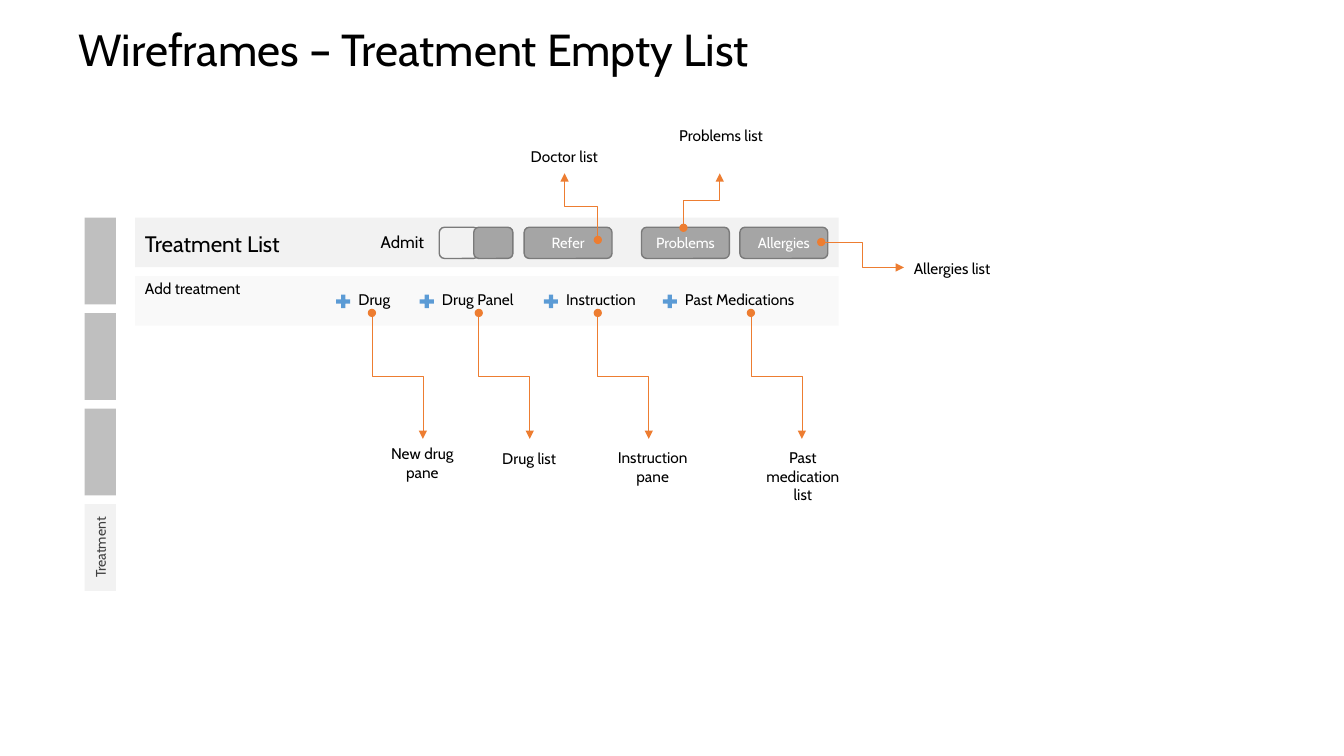
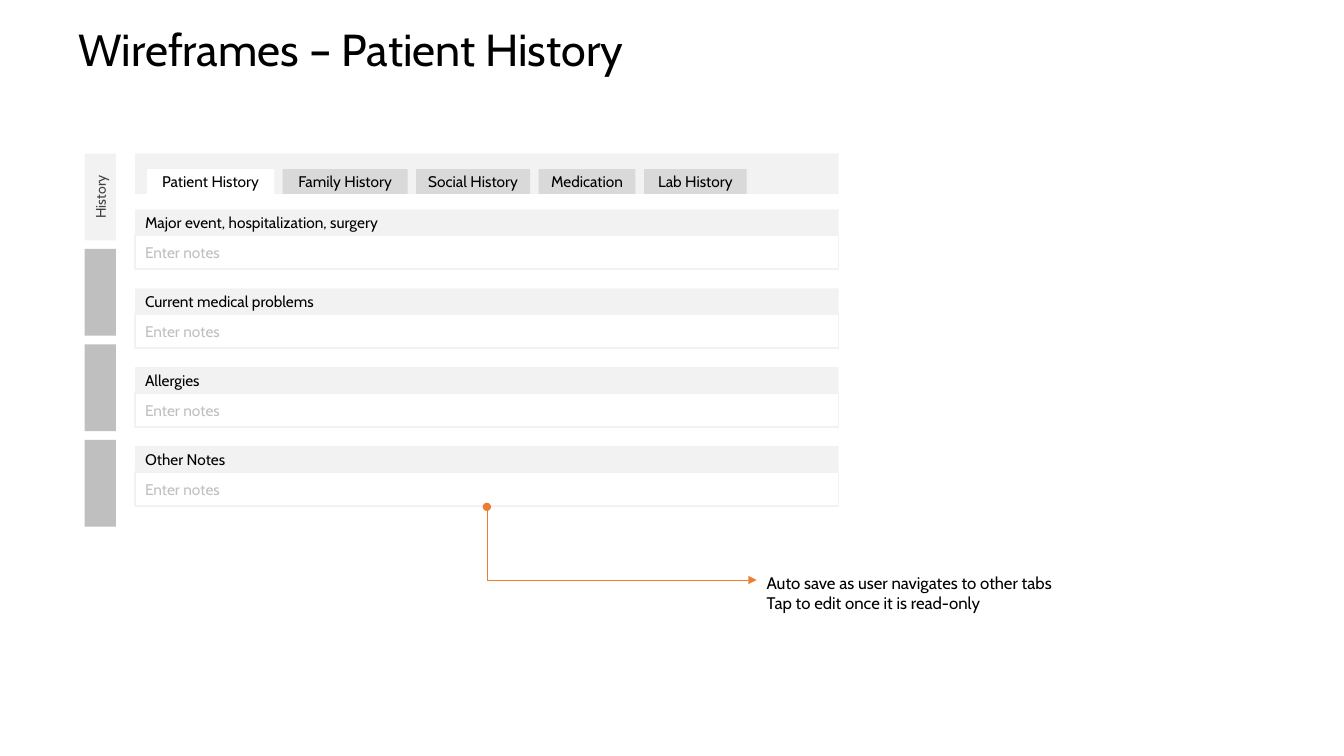
from lxml.etree import SubElement
from pptx import Presentation
from pptx.dml.color import RGBColor
from pptx.enum.shapes import MSO_CONNECTOR, MSO_SHAPE
from pptx.enum.text import MSO_ANCHOR, PP_ALIGN
from pptx.oxml.ns import qn
from pptx.util import Pt

FONT = "Cabin"
BLACK = RGBColor(0x00, 0x00, 0x00)
WHITE = RGBColor(0xFF, 0xFF, 0xFF)
CHARCOAL = RGBColor(0x40, 0x40, 0x40)
BUTTON_EDGE = RGBColor(0x7A, 0x7A, 0x7A)
BUTTON_GREY = RGBColor(0xA5, 0xA5, 0xA5)
MID_GREY = RGBColor(0xBF, 0xBF, 0xBF)
TAB_GREY = RGBColor(0xD9, 0xD9, 0xD9)
BAND_GREY = RGBColor(0xF2, 0xF2, 0xF2)
PALE_GREY = RGBColor(0xF9, 0xF9, 0xF9)
BLUE = RGBColor(0x5B, 0x9B, 0xD5)
ORANGE = RGBColor(0xED, 0x7D, 0x31)

PANEL_LEFT, PANEL_WIDTH = 96.5, 502.6
RAIL_LEFT, RAIL_WIDTH, RAIL_HEIGHT, RAIL_PITCH = 60.5, 22.3, 62, 68.2
BUTTON_TOP, BUTTON_HEIGHT = 162.3, 22.3
TAB_GAP = 6.1
SECTION_PITCH = 56.4

BUTTONS = [("Refer", 374.4), ("Problems", 458.2), ("Allergies", 528.5)]
ACTIONS = [
    ("Drug", 238.3, 46, 265.7, "New drug pane", (269.3, 314, 64.8, 34)),
    ("Drug Panel", 298, 75.6, 342, "Drug list", (345.6, 317.5, 64.8, 21)),
    ("Instruction", 386.7, 75.6, 427, "Instruction pane", (432.7, 316.8, 67, 34)),
    ("Past Medications", 471.6, 108.7, 536.4, "Past medication list",
     (536.4, 316.8, 74.2, 47.5)),
]
TABS = [("Patient History", 90.7), ("Family History", 89.3), ("Social History", 81.4),
        ("Medication", 69.1), ("Lab History", 73.4)]
SECTIONS = ["Major event, hospitalization, surgery", "Current medical problems",
            "Allergies", "Other Notes"]


def write(shape, text, size, color=BLACK, align=PP_ALIGN.LEFT, anchor=MSO_ANCHOR.TOP):
    frame = shape.text_frame
    frame.text = text
    frame.word_wrap = True
    frame.vertical_anchor = anchor
    for paragraph in frame.paragraphs:
        paragraph.alignment = align
        for run in paragraph.runs:
            run.font.name = FONT
            run.font.size = Pt(size)
            run.font.color.rgb = color


def add_label(slide, text, left, top, width, height, size=11, align=PP_ALIGN.LEFT):
    label = slide.shapes.add_textbox(Pt(left), Pt(top), Pt(width), Pt(height))
    write(label, text, size, align=align)


def add_box(slide, left, top, width, height, fill, edge=None, kind=MSO_SHAPE.RECTANGLE):
    box = slide.shapes.add_shape(kind, Pt(left), Pt(top), Pt(width), Pt(height))
    box.shadow.inherit = False
    box.fill.solid()
    box.fill.fore_color.rgb = fill
    if edge is None:
        box.line.fill.background()
    else:
        box.line.color.rgb = edge
        box.line.width = Pt(1)
    return box


def add_button(slide, left, width, fill=BUTTON_GREY, text=""):
    button = add_box(slide, left, BUTTON_TOP, width, BUTTON_HEIGHT, fill, BUTTON_EDGE,
                     MSO_SHAPE.ROUNDED_RECTANGLE)
    if text:
        write(button, text, 10.5, WHITE, PP_ALIGN.CENTER, MSO_ANCHOR.MIDDLE)


def add_callout(slide, start, end, vertical=True, single_bend=False):
    (x1, y1), (x2, y2) = start, end
    if vertical:
        mid_x, mid_y = (x1 + x2) / 2, (y1 + y2) / 2
        half_x, half_y = (x2 - x1) / 2, (y2 - y1) / 2
        x1, x2 = mid_x + half_y, mid_x - half_y
        y1, y2 = mid_y - half_x, mid_y + half_x
    callout = slide.shapes.add_connector(MSO_CONNECTOR.ELBOW, Pt(x1), Pt(y1), Pt(x2), Pt(y2))
    callout.line.color.rgb = ORANGE
    callout.line.width = Pt(0.5)
    properties = callout.element.spPr
    if vertical:
        properties.find(qn("a:xfrm")).set("rot", str(270 * 60000))
    if single_bend:
        properties.find(qn("a:prstGeom")).set("prst", "bentConnector2")
    outline = properties.find(qn("a:ln"))
    SubElement(outline, qn("a:headEnd"), type="oval")
    SubElement(outline, qn("a:tailEnd"), type="triangle")
    SubElement(properties, qn("a:effectLst"))


def add_rail(slide, top, active_name, active_index):
    for index in range(4):
        tab_top = top + index * RAIL_PITCH
        if index != active_index:
            add_box(slide, RAIL_LEFT, tab_top, RAIL_WIDTH, RAIL_HEIGHT, MID_GREY)
            continue
        shift = (RAIL_HEIGHT - RAIL_WIDTH) / 2
        active = add_box(slide, RAIL_LEFT - shift, tab_top + shift,
                         RAIL_HEIGHT, RAIL_WIDTH, BAND_GREY)
        active.rotation = 270
        write(active, active_name, 10, CHARCOAL, PP_ALIGN.CENTER, MSO_ANCHOR.MIDDLE)


def add_wireframe(deck, title, rail_top, active_name, active_index):
    slide = deck.slides.add_slide(deck.slide_layouts[6])
    add_rail(slide, rail_top, active_name, active_index)
    add_label(slide, title, 49, 12.2, 846.7, 69.8, 32)
    return slide


def add_action(slide, name, left, width, dot_x, outcome, outcome_area):
    add_label(slide, name, left + 10.6, 203.8, width, 21)
    add_box(slide, left, 208.8, 13.7, 13, BLUE, kind=MSO_SHAPE.MATH_PLUS)
    add_callout(slide, (dot_x, 223.5), (dot_x + 36.4, 313.5))
    add_label(slide, outcome, *outcome_area, align=PP_ALIGN.CENTER)


def add_section(slide, heading, top):
    notes = add_box(slide, PANEL_LEFT, top + 18.4, PANEL_WIDTH, 24.3, WHITE, BAND_GREY)
    write(notes, "Enter notes", 11, MID_GREY, anchor=MSO_ANCHOR.MIDDLE)
    header = add_box(slide, PANEL_LEFT, top, PANEL_WIDTH, 18.9, BAND_GREY)
    write(header, heading, 11, anchor=MSO_ANCHOR.MIDDLE)


def add_tabs(slide, left, top):
    for name, width in TABS:
        fill = WHITE if name == TABS[0][0] else TAB_GREY
        tab = add_box(slide, left, top, width, 17.8, fill)
        write(tab, name, 11, align=PP_ALIGN.CENTER, anchor=MSO_ANCHOR.MIDDLE)
        left += width + TAB_GAP


def build_treatment(deck):
    slide = add_wireframe(deck, "Wireframes – Treatment Empty List", 155.5, "Treatment", 3)
    add_box(slide, PANEL_LEFT, 155.5, PANEL_WIDTH, 35.3, BAND_GREY)
    add_label(slide, "Treatment List", PANEL_LEFT, 160.6, 116, 26.6, 16)
    for name, left in BUTTONS:
        add_button(slide, left, 62.8, text=name)
    add_button(slide, 313.8, 28, BAND_GREY)
    add_label(slide, "Admit", 264.9, 162, 56, 21.8, 12)
    add_button(slide, 338.4, 28)

    add_box(slide, PANEL_LEFT, 197.3, PANEL_WIDTH, 35.3, PALE_GREY)
    add_label(slide, "Add treatment", PANEL_LEFT, 195.9, 91.4, 21)
    for action in ACTIONS:
        add_action(slide, *action)

    add_callout(slide, (586.6, 172.9), (645.8, 191), vertical=False)
    add_callout(slide, (488.2, 162.7), (514.1, 123.8))
    add_callout(slide, (427, 171.4), (403.2, 123.8))
    add_label(slide, "Allergies list", 643, 181.5, 74.2, 21, align=PP_ALIGN.CENTER)
    add_label(slide, "Problems list", 478, 86.8, 74.2, 34, align=PP_ALIGN.CENTER)
    add_label(slide, "Doctor list", 366, 101.7, 74.2, 21, align=PP_ALIGN.CENTER)


def build_history(deck):
    slide = add_wireframe(deck, "Wireframes – Patient History", 109.6, "History", 0)
    add_box(slide, PANEL_LEFT, 109.6, PANEL_WIDTH, 29, BAND_GREY)
    add_tabs(slide, 105.1, 120.8)
    for index, heading in enumerate(SECTIONS):
        add_section(slide, heading, 149.5 + index * SECTION_PITCH)
    remark = add_box(slide, 540.5, 405.4, 272.2, 67, WHITE)
    write(remark, "Auto save as user navigates to other tabs\nTap to edit once it is read-only", 12)
    add_callout(slide, (347.8, 362), (540.5, 414.3), single_bend=True)


def main():
    deck = Presentation()
    deck.slide_width, deck.slide_height = Pt(960), Pt(540)
    build_treatment(deck)
    build_history(deck)
    deck.save("out.pptx")


if __name__ == "__main__":
    main()
